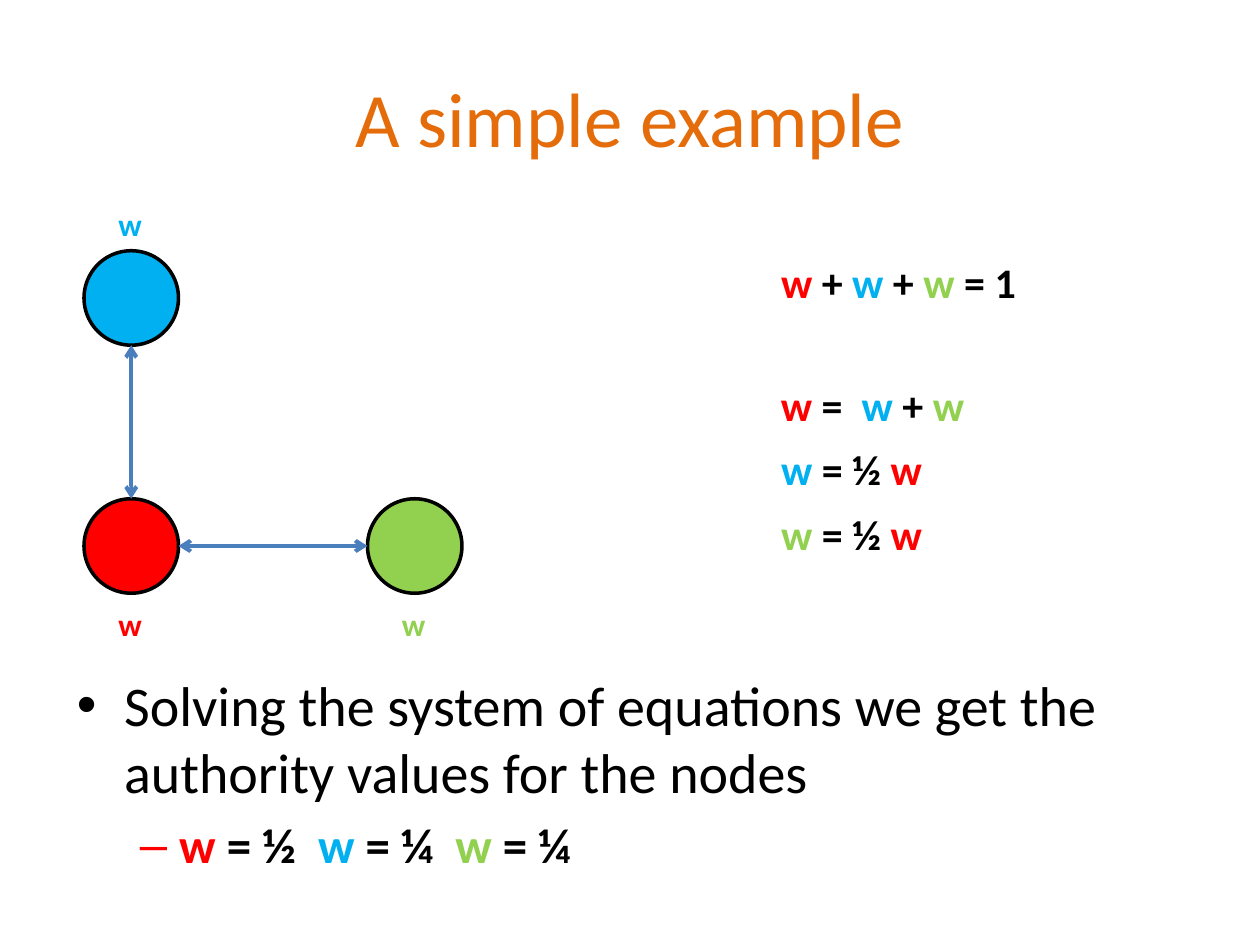
from dataclasses import dataclass

from lxml.etree import SubElement
from pptx import Presentation
from pptx.dml.color import RGBColor
from pptx.enum.shapes import MSO_CONNECTOR, MSO_SHAPE
from pptx.enum.text import MSO_AUTO_SIZE
from pptx.oxml.ns import qn
from pptx.util import Pt

RED = RGBColor(0xFF, 0x00, 0x00)
BLUE = RGBColor(0x00, 0xB0, 0xF0)
GREEN = RGBColor(0x92, 0xD0, 0x50)
BLACK = RGBColor(0x00, 0x00, 0x00)
ORANGE = RGBColor(0xE4, 0x6C, 0x0A)
ARROW_BLUE = RGBColor(0x4B, 0x7E, 0xBC)

FONT = "Calibri"
DIAMETER = 54
RADIUS = DIAMETER / 2
LABEL_SIZE = 28.8

Piece = tuple[str, RGBColor]


@dataclass(frozen=True)
class Node:
    left: float
    top: float
    color: RGBColor
    label_top: float

    @property
    def center_x(self) -> float:
        return self.left + RADIUS

    @property
    def center_y(self) -> float:
        return self.top + RADIUS


@dataclass(frozen=True)
class Equation:
    top: float
    width: float
    pieces: list[Piece]


HUB = Node(48, 285, RED, 342)
RIGHT = Node(210, 285, GREEN, 342)
ABOVE = Node(48, 143.25, BLUE, 113.75)

EQUATION_LEFT = 439.2
EQUATIONS = [
    Equation(143.25, 173.5, [("w", RED), (" + ", BLACK), ("w", BLUE),
                             (" + ", BLACK), ("w", GREEN), (" = 1", BLACK)]),
    Equation(213.25, 139.7, [("w", RED), (" =  ", BLACK), ("w", BLUE),
                             (" + ", BLACK), ("w", GREEN)]),
    Equation(250, 106.6, [("w ", BLUE), ("= ½ ", BLACK), ("w", RED)]),
    Equation(287.25, 106.6, [("w ", GREEN), ("= ½ ", BLACK), ("w", RED)]),
]
SOLUTION = [("w ", RED), ("= ½  ", BLACK), ("w", BLUE), (" = ¼  ", BLACK),
            ("w ", GREEN), ("= ¼", BLACK)]


def add_runs(paragraph, pieces: list[Piece], size: float, bold: bool = True) -> None:
    for text, color in pieces:
        run = paragraph.add_run()
        run.text = text
        run.font.name = FONT
        run.font.size = Pt(size)
        run.font.bold = bold
        run.font.color.rgb = color


def place(shape, left: float, top: float, width: float, height: float) -> None:
    shape.left, shape.top = Pt(left), Pt(top)
    shape.width, shape.height = Pt(width), Pt(height)


def add_text(shapes, left: float, top: float, width: float, height: float,
             pieces: list[Piece], size: float) -> None:
    box = shapes.add_textbox(Pt(left), Pt(top), Pt(width), Pt(height))
    frame = box.text_frame
    frame.word_wrap = False
    frame.auto_size = MSO_AUTO_SIZE.SHAPE_TO_FIT_TEXT
    add_runs(frame.paragraphs[0], pieces, size)


def add_node(shapes, node: Node) -> None:
    circle = shapes.add_shape(MSO_SHAPE.OVAL, Pt(node.left), Pt(node.top),
                              Pt(DIAMETER), Pt(DIAMETER))
    circle.shadow.inherit = False
    circle.fill.solid()
    circle.fill.fore_color.rgb = node.color
    circle.line.color.rgb = BLACK
    circle.line.width = Pt(2)
    add_text(shapes, node.center_x - LABEL_SIZE / 2, node.label_top,
             LABEL_SIZE, LABEL_SIZE, [("w", node.color)], 18)


def add_double_arrow(shapes, x1: float, y1: float, x2: float, y2: float) -> None:
    arrow = shapes.add_connector(MSO_CONNECTOR.STRAIGHT, Pt(x1), Pt(y1), Pt(x2), Pt(y2))
    arrow.line.color.rgb = ARROW_BLUE
    arrow.line.width = Pt(2.25)
    line = arrow.line._get_or_add_ln()
    for end in ("a:headEnd", "a:tailEnd"):
        SubElement(line, qn(end), type="arrow")
    SubElement(arrow._element.spPr, qn("a:effectLst"))


def main() -> None:
    deck = Presentation()
    deck.slide_width, deck.slide_height = Pt(720), Pt(540)
    slide = deck.slides.add_slide(deck.slide_layouts[1])
    shapes = slide.shapes

    title = shapes.title
    place(title, 36, 21.6, 648, 90)
    add_runs(title.text_frame.paragraphs[0], [("A simple example", ORANGE)], 44, bold=False)

    body = slide.placeholders[1]
    place(body, 36.7, 379.5, 647.3, 140.4)
    conclusion = body.text_frame.paragraphs[0]
    add_runs(conclusion, [("Solving the system of equations we get the "
                           "authority values for the nodes", BLACK)], 32, bold=False)
    solution = body.text_frame.add_paragraph()
    solution.level = 1
    add_runs(solution, SOLUTION, 28)

    for node in (HUB, RIGHT, ABOVE):
        add_node(shapes, node)
    add_double_arrow(shapes, HUB.center_x, HUB.top, ABOVE.center_x, ABOVE.top + DIAMETER)
    add_double_arrow(shapes, HUB.left + DIAMETER, HUB.center_y, RIGHT.left, RIGHT.center_y)

    for equation in EQUATIONS:
        add_text(shapes, EQUATION_LEFT, equation.top, equation.width, 36,
                 equation.pieces, 24)

    deck.save("out.pptx")


if __name__ == "__main__":
    main()
